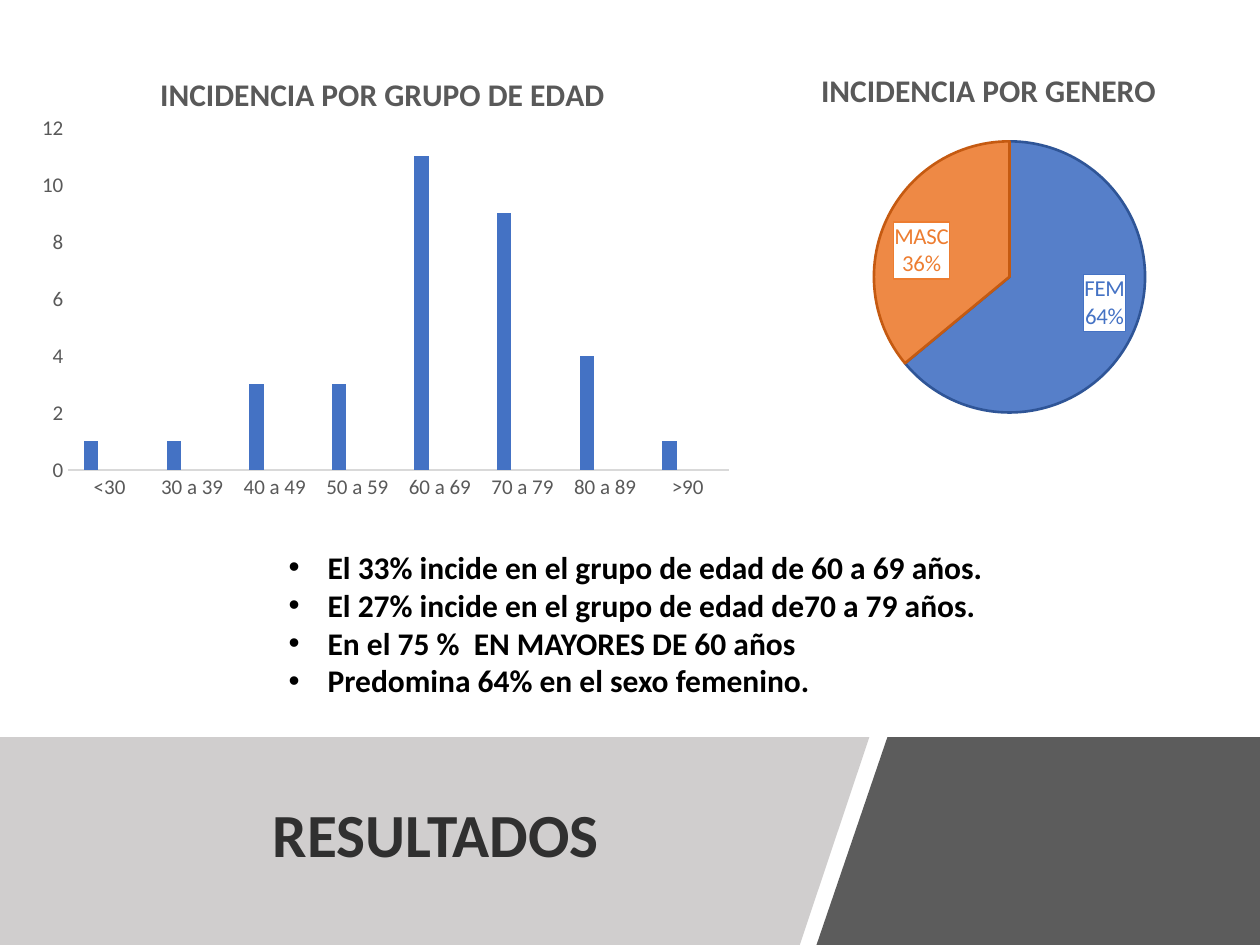
from pptx import Presentation
from pptx import util as u
from pptx.chart.data import CategoryChartData
from pptx.dml.color import RGBColor
from pptx.enum import chart as charts, text
from pptx.oxml import parse_xml
from pptx.oxml.ns import nsdecls

WIDTH, HEIGHT = u.Inches(10), u.Inches(7.5)
FONT = "Calibri"
BLACK = RGBColor(0x00, 0x00, 0x00)
WHITE = RGBColor(0xFF, 0xFF, 0xFF)
INK = RGBColor(0x30, 0x30, 0x30)
GREY = RGBColor(0x59, 0x59, 0x59)
RULE = RGBColor(0xD9, 0xD9, 0xD9)
LIGHT_BAND = RGBColor(0xD0, 0xCE, 0xCE)
DARK_BAND = RGBColor(0x40, 0x40, 0x40)
BLUE = RGBColor(0x44, 0x72, 0xC4)
ORANGE = RGBColor(0xED, 0x7D, 0x31)
SILVER = RGBColor(0xA5, 0xA5, 0xA5)
DARK_BLUE = RGBColor(0x2F, 0x55, 0x97)
DARK_ORANGE = RGBColor(0xC5, 0x5A, 0x11)

AGES = ["<30", "30 a 39", "40 a 49", "50 a 59", "60 a 69", "70 a 79", "80 a 89", ">90"]
AGE_COUNTS = [1, 1, 3, 3, 11, 9, 4, 1]
GENDERS = [("FEM", 64, BLUE, DARK_BLUE), ("MASC", 36, ORANGE, DARK_ORANGE)]
FINDINGS = [
    "El 33% incide en el grupo de edad de 60 a 69 años.",
    "El 27% incide en el grupo de edad de70 a 79 años.",
    "En el 75 %  EN MAYORES DE 60 años",
    "Predomina 64% en el sexo femenino.",
]


def area(left, top, width, height):
    """Turn percentages of the slide into a box in slide units."""
    return tuple(int(share * side / 100) for share, side in
                 zip((left, top, width, height), (WIDTH, HEIGHT) * 2))


def style(font, size, color, bold=False):
    """Apply the slide's typeface with a size, colour and weight."""
    font.name, font.size, font.bold = FONT, u.Pt(size), bold
    font.color.rgb = color


def set_alpha(colors, percent):
    """Make the given colour elements partly transparent."""
    for color in colors:
        color.append(parse_xml(f'<a:alpha {nsdecls("a")} val="{percent * 1000}"/>'))


def set_layout(element, position, **shares):
    """Place a chart part at shares of the chart's size."""
    for old in element.xpath("c:layout"):
        element.remove(old)
    target = '<c:layoutTarget val="inner"/>' if "w" in shares else ""
    modes = '<c:xMode val="edge"/><c:yMode val="edge"/>'
    values = "".join(f'<c:{key} val="{share}"/>' for key, share in shares.items())
    element.insert(position, parse_xml(
        f'<c:layout {nsdecls("c")}><c:manualLayout>{target}{modes}{values}'
        '</c:manualLayout></c:layout>'))


def add_band(slide, box, outline, color, alpha=100):
    """Draw a polygon behind the text, its corners given as shares of the box."""
    left, top, width, height = box
    corners = [(left + int(x * width), top + int(y * height)) for x, y in outline]
    builder = slide.shapes.build_freeform(*corners[0])
    builder.add_line_segments(corners[1:], close=True)
    band = builder.convert_to_shape()
    band.shadow.inherit = False
    band.fill.solid()
    band.fill.fore_color.rgb = color
    band.line.fill.background()
    if alpha < 100:
        set_alpha(band.element.xpath("./p:spPr/a:solidFill/a:srgbClr"), alpha)
    slide.shapes.element.insert(2, band.element)


def place(shape, box):
    """Move a placeholder to the box."""
    shape.left, shape.top, shape.width, shape.height = box


def fill_title(slide, box):
    """Write the slide title."""
    title = slide.shapes.title
    place(title, box)
    frame = title.text_frame
    frame.text = "RESULTADOS"
    frame.vertical_anchor = text.MSO_ANCHOR.MIDDLE
    paragraph = frame.paragraphs[0]
    paragraph.alignment = text.PP_ALIGN.CENTER
    paragraph.line_spacing = 0.9
    style(paragraph.runs[0].font, 35, INK, True)


def fill_findings(slide, box):
    """Write the bulleted findings in the body placeholder."""
    body = slide.placeholders[1]
    place(body, box)
    frame = body.text_frame
    frame.text = "\n".join(FINDINGS)
    frame.word_wrap = False
    frame.auto_size = text.MSO_AUTO_SIZE.SHAPE_TO_FIT_TEXT
    for paragraph in frame.paragraphs:
        paragraph.space_before = u.Pt(0)
        properties = paragraph._p.get_or_add_pPr()
        properties.set("marL", str(u.Inches(0.31)))
        properties.set("indent", str(-u.Inches(0.31)))
        properties.append(parse_xml(f'<a:buChar {nsdecls("a")} char="•"/>'))
        style(paragraph.runs[0].font, 18, BLACK, True)


def add_chart(slide, box, kind, data, title, title_at, plot_at):
    """Add a chart with a placed title and plot area and no legend."""
    chart = slide.shapes.add_chart(kind, *box, data).chart
    chart.has_legend = False
    style(chart.font, 12, GREY)
    chart.has_title = True
    frame = chart.chart_title.text_frame
    frame.text = title
    style(frame.paragraphs[0].runs[0].font, 18, GREY, True)
    set_layout(chart.chart_title._element, 1, **title_at)
    set_layout(chart._chartSpace.chart.plotArea, 0, **plot_at)
    return chart


def add_age_chart(slide, box):
    """Add the column chart of cases by age group."""
    data = CategoryChartData()
    data.categories = AGES
    data.add_series("Series 1", AGE_COUNTS)
    for name in ("Series 2", "Series 3"):
        data.add_series(name, [None] * len(AGES))
    chart = add_chart(slide, box, charts.XL_CHART_TYPE.COLUMN_CLUSTERED, data,
                      "INCIDENCIA POR GRUPO DE EDAD", dict(x=0.18, y=0.06),
                      dict(x=0.06, y=0.19, w=0.92, h=0.72))
    plot = chart.plots[0]
    plot.gap_width, plot.overlap, plot.vary_by_categories = 219, -27, False
    for series, color in zip(plot.series, (BLUE, ORANGE, SILVER)):
        series.format.fill.solid()
        series.format.fill.fore_color.rgb = color
    for axis in (chart.category_axis, chart.value_axis):
        axis.has_major_gridlines = False
        axis.major_tick_mark = charts.XL_TICK_MARK.NONE
        style(axis.tick_labels.font, 12, GREY)
    chart.category_axis.format.line.color.rgb = RULE
    chart.category_axis.format.line.width = u.Pt(0.75)
    chart.value_axis.format.line.fill.background()
    chart.value_axis.minimum_scale, chart.value_axis.maximum_scale = 0, 12
    chart.value_axis.major_unit = 2


def box_label(label, color):
    """Show category and percentage in a white box with a coloured border."""
    for flag in ("showVal", "showCatName", "showPercent"):
        label.xpath(f"c:{flag}")[0].set("val", str(int(flag != "showVal")))
    label.xpath("c:txPr")[0].addprevious(parse_xml(
        f'<c:spPr {nsdecls("c", "a")}><a:solidFill><a:srgbClr val="{WHITE}"/></a:solidFill>'
        f'<a:ln w="12700"><a:solidFill><a:srgbClr val="{color}"/></a:solidFill></a:ln></c:spPr>'))
    label.append(parse_xml(f'<c:separator {nsdecls("c")}>\n</c:separator>'))


def add_gender_chart(slide, box):
    """Add the pie chart of cases by gender."""
    data = CategoryChartData()
    data.categories = [name for name, *_ in GENDERS]
    data.add_series("Series 1", [value for _, value, *_ in GENDERS])
    chart = add_chart(slide, box, charts.XL_CHART_TYPE.PIE, data,
                      "INCIDENCIA POR GENERO", dict(x=0.24, y=0.07),
                      dict(x=0.33, y=0.27, w=0.43, h=0.69))
    series = chart.plots[0].series[0]
    for index, (_, _, color, edge) in enumerate(GENDERS):
        point = series.points[index]
        point.format.fill.solid()
        point.format.fill.fore_color.rgb = color
        point.format.line.color.rgb = edge
        point.format.line.width = u.Pt(1.5)
        style(point.data_label.font, 13, color)
        point.data_label.position = charts.XL_LABEL_POSITION.INSIDE_END
    set_alpha(series._element.xpath("c:dPt/c:spPr/a:solidFill/a:srgbClr"), 90)
    for label, (_, _, color, _) in zip(series._element.xpath("c:dLbls/c:dLbl"), GENDERS):
        box_label(label, color)


def main():
    """Build the results slide and save it."""
    presentation = Presentation()
    presentation.slide_width, presentation.slide_height = WIDTH, HEIGHT
    slide = presentation.slides.add_slide(presentation.slide_layouts[1])
    add_band(slide, area(0, 78, 69, 22), [(0, 0), (1, 0), (0.92, 1), (0, 1)], LIGHT_BAND)
    add_band(slide, area(64.8, 78, 35.2, 22), [(0.16, 0), (1, 0), (1, 1), (0, 1)],
             DARK_BAND, 85)
    fill_title(slide, area(6.9, 80.67, 55.4, 16))
    fill_findings(slide, area(21.9, 57.33, 58.9, 17.47))
    add_age_chart(slide, area(2, 4, 57, 50.27))
    add_gender_chart(slide, area(52.6, 3.73, 50.5, 41.6))
    presentation.save("out.pptx")


if __name__ == "__main__":
    main()
